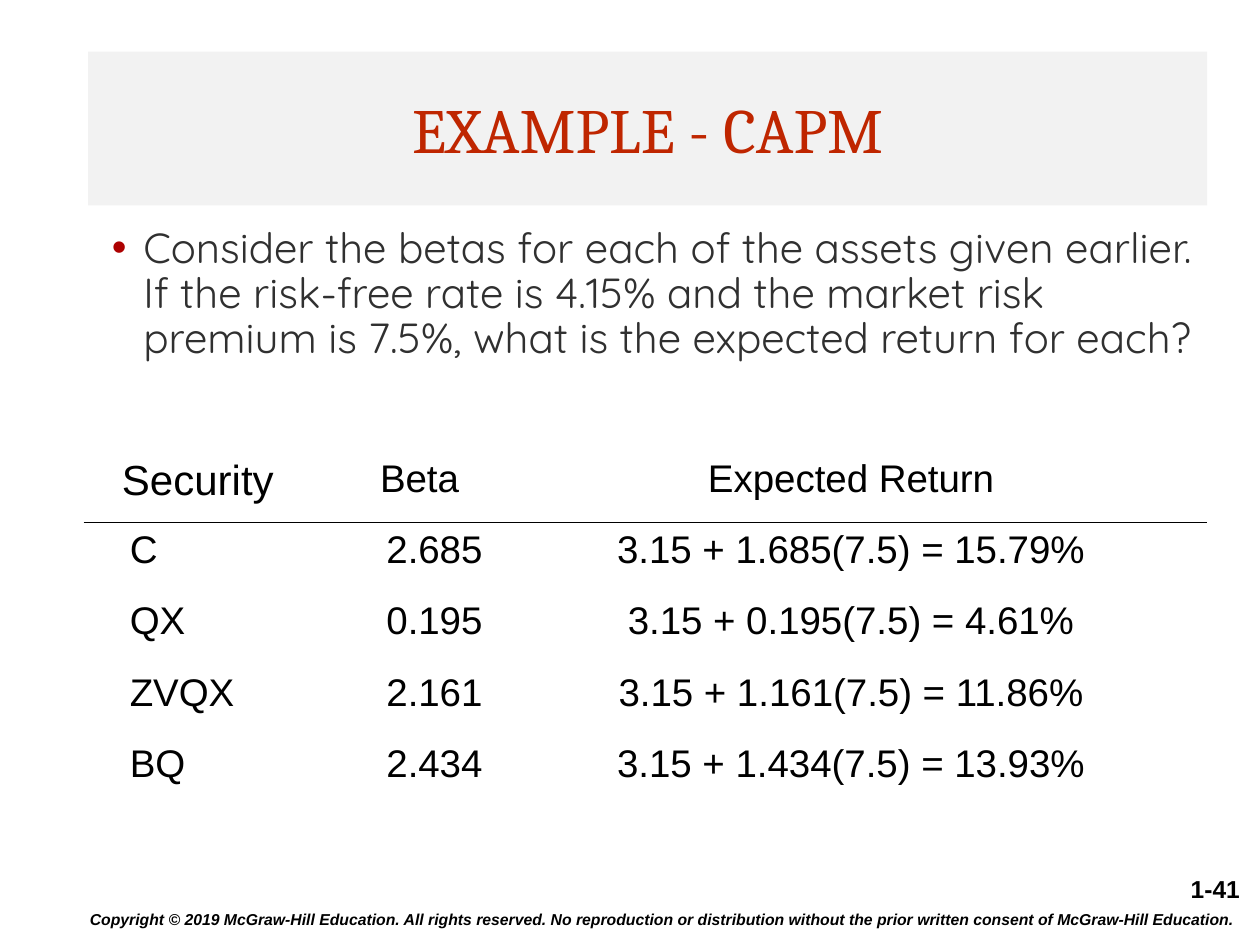
"""Build a slide that works out expected returns with the CAPM."""
import pptx
import pptx.dml.color
import pptx.enum.shapes
import pptx.enum.text
import pptx.oxml
import pptx.oxml.ns
import pptx.util

Inches = pptx.util.Inches
RGBColor = pptx.dml.color.RGBColor
Align = pptx.enum.text.PP_ALIGN
Anchor = pptx.enum.text.MSO_ANCHOR

BLACK = RGBColor(0x00, 0x00, 0x00)
RED = RGBColor(0xBF, 0x26, 0x00)
BULLET_RED = RGBColor(0xAD, 0x01, 0x01)
GREY = RGBColor(0x30, 0x30, 0x30)
BAND = RGBColor(0xF2, 0xF2, 0xF2)

TITLE = "EXAMPLE - CAPM"
QUESTION = (
    "Consider the betas for each of the assets given earlier. If the risk-free rate is 4.15% "
    "and the market risk premium is 7.5%, what is the expected return for each?"
)
PAGE_NUMBER = "1-41"
COPYRIGHT = (
    "Copyright © 2019 McGraw-Hill Education. All rights reserved. No reproduction or "
    "distribution without the prior written consent of McGraw-Hill Education."
)
HEADERS = ["Security", "Beta", "Expected Return"]
SECURITIES = [
    ("C", "2.685", "3.15 + 1.685(7.5) = 15.79%"),
    ("QX", "0.195", "3.15 + 0.195(7.5) = 4.61%"),
    ("ZVQX", "2.161", "3.15 + 1.161(7.5) = 11.86%"),
    ("BQ", "2.434", "3.15 + 1.434(7.5) = 13.93%"),
]
COLUMN_WIDTHS = [1.8, 1.47, 5.63]
COLUMN_ALIGNMENTS = [Align.LEFT, Align.RIGHT, Align.CENTER]
TABLE_LEFT, TABLE_TOP, TABLE_HEIGHT = 0.67, 3.58, 2.83
CELL_MARGIN, INDENTED_MARGIN = 0.11, 0.36


def write_text(frame, text, size=22, font="Arial", color=BLACK, align=Align.LEFT,
               bold=False, italic=False, bullet_color=None):
    """Put one formatted paragraph in a text frame."""
    frame.word_wrap = True
    paragraph = frame.paragraphs[0]
    paragraph.text = text
    paragraph.alignment = align
    if bullet_color is not None:
        add_bullet(paragraph, bullet_color)
    paragraph.font.size = pptx.util.Pt(size)
    paragraph.font.name = font
    paragraph.font.color.rgb = color
    paragraph.font.bold = bold
    paragraph.font.italic = italic


def add_bullet(paragraph, color):
    """Give a paragraph a hanging coloured bullet."""
    paragraph.line_spacing = 0.9
    properties = paragraph._p.get_or_add_pPr()
    properties.set("marL", str(Inches(0.37)))
    properties.set("indent", str(Inches(-0.25)))
    namespace = pptx.oxml.ns.nsdecls("a")
    for xml in (
        f'<a:buClr {namespace}><a:srgbClr val="{color}"/></a:buClr>',
        f'<a:buFont {namespace} typeface="Arial"/>',
        f'<a:buChar {namespace} char="•"/>',
    ):
        properties.append(pptx.oxml.parse_xml(xml))


def add_text_box(slide, box, text, anchor=Anchor.TOP, right_margin=0.1, **text_format):
    """Add a text box at left, top, width, height in inches."""
    frame = slide.shapes.add_textbox(*map(Inches, box)).text_frame
    frame.vertical_anchor = anchor
    frame.margin_right = Inches(right_margin)
    write_text(frame, text, **text_format)


def add_title(slide):
    """Add the grey band that holds the title."""
    band = slide.shapes.add_shape(
        pptx.enum.shapes.MSO_SHAPE.RECTANGLE, *map(Inches, (0.7, 0.41, 8.88, 1.22)))
    band.shadow.inherit = False
    band.fill.solid()
    band.fill.fore_color.rgb = BAND
    band.line.fill.background()
    band.text_frame.vertical_anchor = Anchor.MIDDLE
    write_text(band.text_frame, TITLE, size=36, font="Cambria", color=RED, align=Align.CENTER)


def set_border(cell, side):
    """Draw a one-point black line on one side of a cell."""
    properties = cell._tc.get_or_add_tcPr()
    properties.insert(0, pptx.oxml.parse_xml(
        f'<a:{side} {pptx.oxml.ns.nsdecls("a")} w="{pptx.util.Pt(1)}">'
        f'<a:solidFill><a:srgbClr val="{BLACK}"/></a:solidFill></a:{side}>'))


def add_securities_table(slide):
    """Add the table of betas and expected returns."""
    rows = [HEADERS, *SECURITIES]
    table = slide.shapes.add_table(
        len(rows), len(HEADERS), Inches(TABLE_LEFT), Inches(TABLE_TOP),
        Inches(sum(COLUMN_WIDTHS)), Inches(TABLE_HEIGHT)).table
    table.first_row = False
    table.horz_banding = False
    for column, width in zip(table.columns, COLUMN_WIDTHS):
        column.width = Inches(width)
    for row_index, row in enumerate(rows):
        for column_index, text in enumerate(row):
            cell = table.cell(row_index, column_index)
            is_header = row_index == 0
            indented = text == "Beta" or (column_index == 0 and not is_header)
            cell.margin_left = Inches(INDENTED_MARGIN if indented else CELL_MARGIN)
            cell.margin_right = Inches(CELL_MARGIN)
            cell.fill.background()
            if row_index < 2:
                set_border(cell, "lnB" if is_header else "lnT")
            write_text(cell.text_frame, text, size=24 if text == "Security" else 22,
                       align=Align.CENTER if is_header else COLUMN_ALIGNMENTS[column_index])


def main():
    """Build and save the slide."""
    presentation = pptx.Presentation()
    presentation.slide_width = Inches(10)
    presentation.slide_height = Inches(7.5)
    slide = presentation.slides.add_slide(presentation.slide_layouts[6])
    add_title(slide)
    add_text_box(slide, (0.67, 1.75, 8.91, 1.58), QUESTION, size=24, font="Quicksand",
                 color=GREY, bullet_color=BULLET_RED)
    add_securities_table(slide)
    add_text_box(slide, (8.79, 6.89, 1.21, 0.3), PAGE_NUMBER, right_margin=0.16, size=14,
                 align=Align.RIGHT, bold=True)
    add_text_box(slide, (0.5, 7.09, 9.5, 0.41), COPYRIGHT, anchor=Anchor.MIDDLE, size=9,
                 align=Align.CENTER, bold=True, italic=True)
    presentation.save("out.pptx")


if __name__ == "__main__":
    main()
